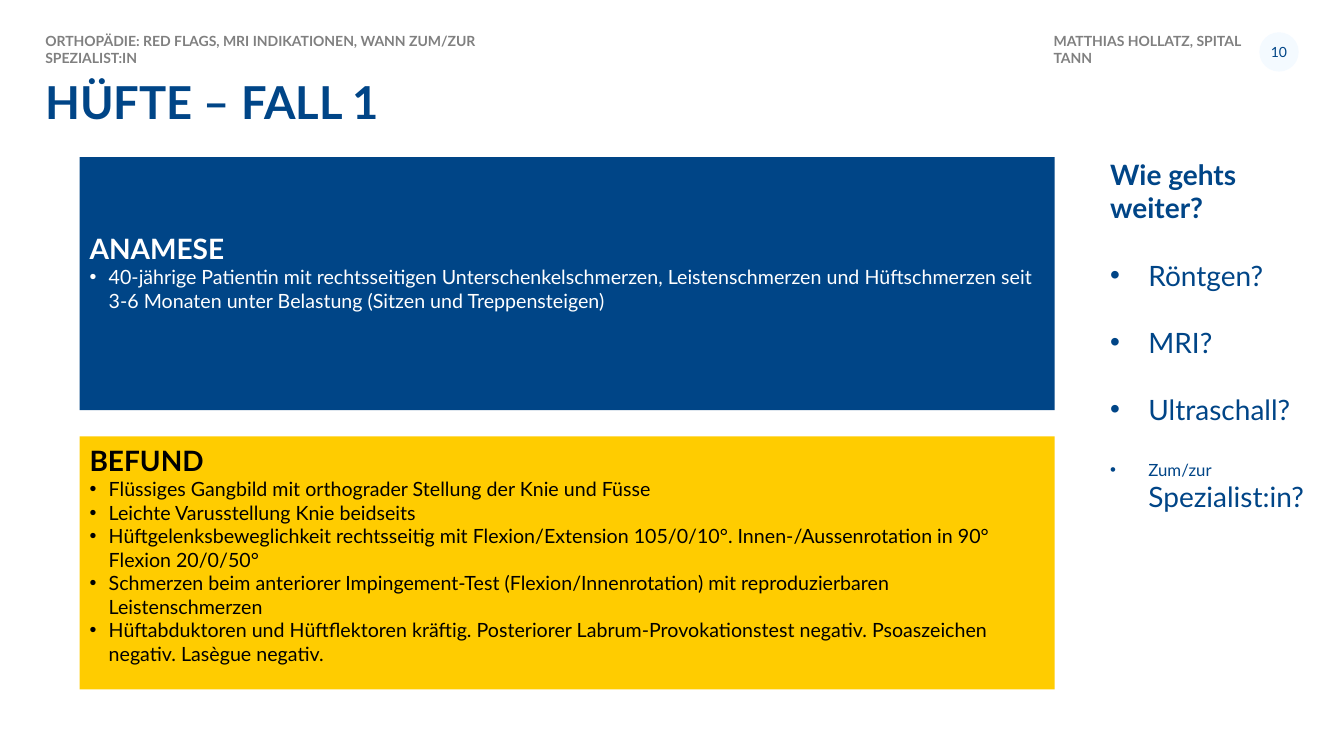
from lxml import etree
from pptx import Presentation, util as u
from pptx.dml.color import RGBColor
from pptx.enum import shapes, text
from pptx.oxml.ns import qn

WIDTH, HEIGHT = 13.33, 7.5
FONT = "Lato"
COLORS = {"blue": "004587", "yellow": "FFCC00", "pale": "F4FAFF",
          "grey": "808080", "white": "FFFFFF", "black": "000000"}
MARGIN, HEADER_TOP = 0.45, 0.32
PANEL_LEFT, PANEL_TOP, PANEL_WIDTH, PANEL_HEIGHT, PANEL_GAP = 0.79, 1.56, 9.67, 2.51, 0.26

ANAMNESIS = ["40-jährige Patientin mit rechtsseitigen Unterschenkelschmerzen, Leistenschmerzen "
             "und Hüftschmerzen seit 3-6 Monaten unter Belastung (Sitzen und Treppensteigen)"]
FINDINGS = [
    "Flüssiges Gangbild mit orthograder Stellung der Knie und Füsse",
    "Leichte Varusstellung Knie beidseits",
    "Hüftgelenksbeweglichkeit rechtsseitig mit Flexion/Extension 105/0/10°. "
    "Innen-/Aussenrotation in 90° Flexion 20/0/50°",
    "Schmerzen beim anteriorer Impingement-Test (Flexion/Innenrotation) mit "
    "reproduzierbaren Leistenschmerzen",
    "Hüftabduktoren und Hüftflektoren kräftig. Posteriorer Labrum-Provokationstest negativ. "
    "Psoaszeichen negativ. Lasègue negativ.",
]
QUESTIONS = [[("Röntgen?", 20)], [("MRI?", 20)], [("Ultraschall?", 20)],
             [("Zum/zur ", 12), ("Spezialist:in?", 20)]]


def color(name):
    """Return the named palette colour."""
    return RGBColor.from_string(COLORS[name])


def add_run(paragraph, words, size, ink, bold=False):
    """Append one formatted run to a paragraph."""
    run = paragraph.add_run()
    run.text = words
    run.font.name = FONT
    run.font.size = u.Pt(size)
    run.font.bold = bold
    run.font.color.rgb = color(ink)


def add_bullet(paragraph, indent):
    """Give a paragraph a hanging round bullet."""
    properties = paragraph._p.get_or_add_pPr()
    properties.set("marL", str(u.Inches(indent)))
    properties.set("indent", str(-u.Inches(indent)))
    etree.SubElement(properties, qn("a:buFont")).set("typeface", "Arial")
    etree.SubElement(properties, qn("a:buChar")).set("char", "•")


def set_frame(frame, side=0, top=0, bottom=0, anchor=text.MSO_ANCHOR.TOP):
    """Set wrapping, insets and anchor of a text frame."""
    frame.word_wrap = True
    frame.margin_left = frame.margin_right = u.Inches(side)
    frame.margin_top, frame.margin_bottom = u.Inches(top), u.Inches(bottom)
    frame.vertical_anchor = anchor
    return frame


def add_label(slide, box, words, size, ink):
    """Add a bold text box without insets and return its paragraph."""
    shape = slide.shapes.add_textbox(*map(u.Inches, box))
    paragraph = set_frame(shape.text_frame).paragraphs[0]
    add_run(paragraph, words, size, ink, True)
    return paragraph


def add_filled(slide, kind, box, fill):
    """Add a flat filled shape without outline."""
    shape = slide.shapes.add_shape(kind, *map(u.Inches, box))
    shape.shadow.inherit = False
    shape.fill.solid()
    shape.fill.fore_color.rgb = color(fill)
    shape.line.fill.background()
    return shape


def add_header(slide, box):
    """Place topic, speaker and page number along the header box."""
    left, top, width, height = box
    badge = 0.39
    speaker = left + width - badge - 2.04
    add_label(slide, (left, top, 4.84, height),
              "ORTHOPÄDIE: RED FLAGS, MRI INDIKATIONEN, WANN ZUM/ZUR SPEZIALIST:IN", 10, "grey")
    add_label(slide, (speaker, top, 2.04, height), "MATTHIAS HOLLATZ, SPITAL TANN", 10, "grey")
    circle = add_filled(slide, shapes.MSO_SHAPE.OVAL,
                        (left + width - badge, top, badge, badge), "pale")
    paragraph = set_frame(circle.text_frame, anchor=text.MSO_ANCHOR.MIDDLE).paragraphs[0]
    paragraph.alignment = text.PP_ALIGN.CENTER
    add_run(paragraph, "10", 10, "blue")


def add_panel(slide, box, heading, items, fill, ink, bottom):
    """Place a coloured panel with a heading and bulleted items."""
    panel = add_filled(slide, shapes.MSO_SHAPE.RECTANGLE, box, fill)
    frame = set_frame(panel.text_frame, 0.1, 0.05, bottom, text.MSO_ANCHOR.MIDDLE)
    add_run(frame.paragraphs[0], heading, 20, ink, True)
    for item in items:
        paragraph = frame.add_paragraph()
        add_bullet(paragraph, 0.19)
        add_run(paragraph, item, 14, ink)
    for paragraph in frame.paragraphs:
        paragraph.alignment = text.PP_ALIGN.LEFT


def add_questions(slide, box):
    """Place the heading and the spaced list of next steps."""
    shape = slide.shapes.add_textbox(*map(u.Inches, box))
    frame = set_frame(shape.text_frame)
    add_run(frame.paragraphs[0], "Wie gehts weiter?", 20, "blue", True)
    for question in QUESTIONS:
        paragraph = frame.add_paragraph()
        paragraph.space_before = u.Pt(24)
        add_bullet(paragraph, 0.38)
        for words, size in question:
            add_run(paragraph, words, size, "blue")


def add_case_slide(presentation):
    """Build the case slide from its regions."""
    slide = presentation.slides.add_slide(presentation.slide_layouts[6])
    content = WIDTH - 2 * MARGIN
    add_header(slide, (MARGIN, HEADER_TOP, content, 0.21))
    title = add_label(slide, (MARGIN, 0.8, content, 0.51), "HÜFTE – FALL 1", 32.4, "blue")
    title.line_spacing = 0.9
    panels = [("ANAMESE", ANAMNESIS, "blue", "white", 0.28),
              ("BEFUND", FINDINGS, "yellow", "black", 0.22)]
    for row, panel in enumerate(panels):
        top = PANEL_TOP + row * (PANEL_HEIGHT + PANEL_GAP)
        add_panel(slide, (PANEL_LEFT, top, PANEL_WIDTH, PANEL_HEIGHT), *panel)
    add_questions(slide, (11.01, PANEL_TOP, 2.21, 5.34))


def main():
    """Create and save the presentation."""
    presentation = Presentation()
    presentation.slide_width = u.Inches(WIDTH)
    presentation.slide_height = u.Inches(HEIGHT)
    add_case_slide(presentation)
    presentation.save("out.pptx")


if __name__ == "__main__":
    main()
